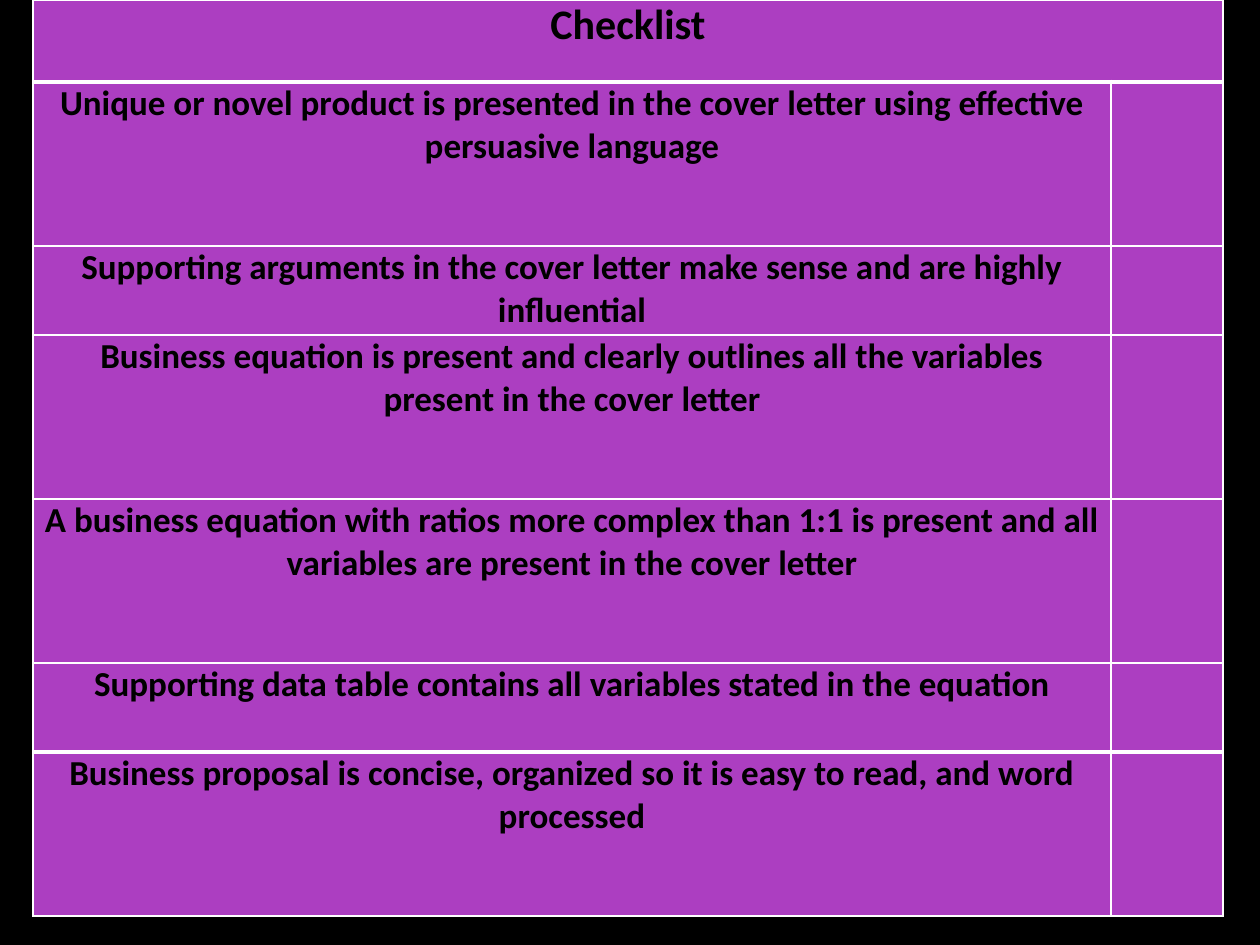
from lxml import etree
from pptx import Presentation
from pptx.dml.color import RGBColor
from pptx.enum.text import MSO_ANCHOR, PP_ALIGN
from pptx.oxml.ns import qn
from pptx.util import Pt

CENTER = PP_ALIGN.CENTER
TOP = MSO_ANCHOR.TOP
BLANK = 6
SCALE = 914400 / 126  # EMU in one px

THEME = {
    "back": "000000", "cell": "AC3EC1", "text": "000000", "line": "FFFFFF",
    "font": "Calibri", "head": 24, "body": 20, "thin": 1, "thick": 3,
}

TITLE = "Checklist"
# Row height in px and wording
ITEMS = [
    (164, "Unique or novel product is presented in the cover letter using "
          "effective persuasive language"),
    (89, "Supporting arguments in the cover letter make sense and are highly "
         "influential"),
    (164, "Business equation is present and clearly outlines all the "
          "variables present in the cover letter"),
    (164, "A business equation with ratios more complex than 1:1 is present "
          "and all variables are present in the cover letter"),
    (89, "Supporting data table contains all variables stated in the equation"),
    (164, "Business proposal is concise, organized so it is easy to read, "
          "and word processed"),
]
COLS = [1078, 112]  # wording, tick box
HEAD = 82


def px(n):
    return round(n * SCALE)


def color(name):
    return RGBColor.from_string(THEME[name])


def assign(thing, values):
    for key, value in values.items():
        setattr(thing, key, value)


def add_lines(cell, widths):
    props = cell._tc.get_or_add_tcPr()
    for side, width in widths.items():
        line = etree.SubElement(props, qn(f"a:ln{side}"), w=str(Pt(width)))
        fill = etree.SubElement(line, qn("a:solidFill"))
        etree.SubElement(fill, qn("a:srgbClr"), val=THEME["line"])


def style_cell(cell, widths):
    add_lines(cell, widths)
    cell.fill.solid()
    cell.fill.fore_color.rgb = color("cell")
    assign(cell, {"margin_left": px(9), "margin_right": px(9),
                  "margin_top": 0, "margin_bottom": 0,
                  "vertical_anchor": TOP})


def write(cell, text, size):
    para = cell.text_frame.paragraphs[0]
    para.alignment = CENTER
    run = para.add_run()
    run.text = text
    assign(run.font, {"name": THEME["font"], "size": Pt(THEME[size]),
                      "bold": True})
    run.font.color.rgb = color("text")


def add_list(slide):
    heights = [HEAD] + [height for height, _ in ITEMS]
    count = len(heights)
    frame = slide.shapes.add_table(count, len(COLS), px(33), 0,
                                   px(sum(COLS)), px(sum(heights)))
    table = frame.table
    assign(table, {"first_row": False, "horz_banding": False})
    for col, width in zip(table.columns, COLS):
        col.width = px(width)

    # Thick rules lie below the heading and above the last item
    thick = {1, count - 1}
    rules = [THEME["thick" if i in thick else "thin"]
             for i in range(count + 1)]
    for i, height in enumerate(heights):
        table.rows[i].height = px(height)
        widths = {"L": THEME["thin"], "R": THEME["thin"],
                  "T": rules[i], "B": rules[i + 1]}
        for j in range(len(COLS)):
            style_cell(table.cell(i, j), widths)

    # Heading spans both columns
    table.cell(0, 0).merge(table.cell(0, 1))
    write(table.cell(0, 0), TITLE, "head")
    for i, (_, text) in enumerate(ITEMS, 1):
        write(table.cell(i, 0), text, "body")


def main():
    deck = Presentation()
    assign(deck, {"slide_width": px(1260), "slide_height": px(945)})
    slide = deck.slides.add_slide(deck.slide_layouts[BLANK])
    back = slide.background.fill
    back.solid()
    back.fore_color.rgb = color("back")
    add_list(slide)
    deck.save("out.pptx")


if __name__ == "__main__":
    main()
